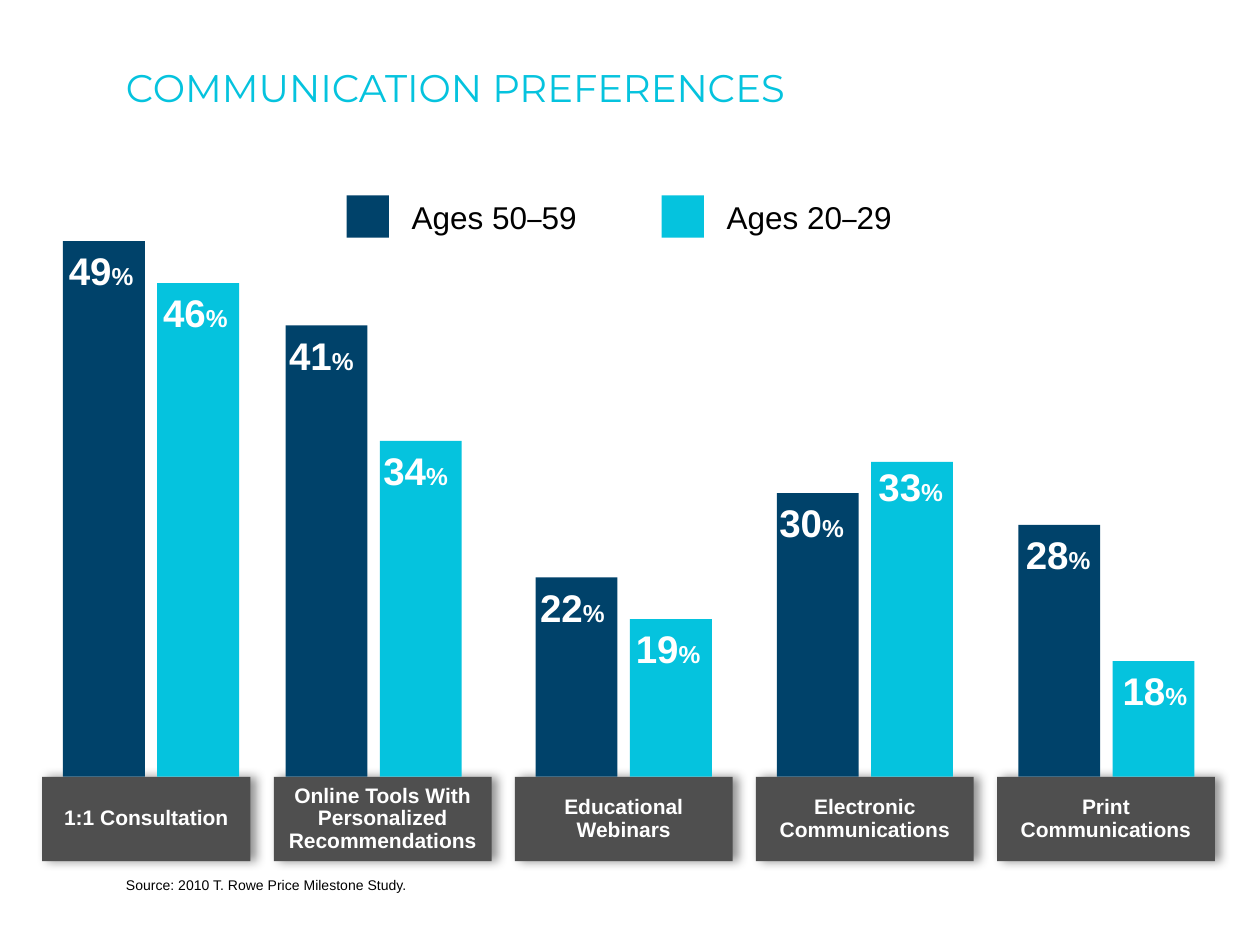
import lxml.etree
import pptx
import pptx.dml.color
import pptx.enum.shapes
import pptx.enum.text
import pptx.oxml.ns
import pptx.util

Cm = pptx.util.Cm
Pt = pptx.util.Pt
KIND = pptx.enum.shapes.MSO_SHAPE
ANCHOR = pptx.enum.text.MSO_ANCHOR
ALIGN = pptx.enum.text.PP_ALIGN
FIT = pptx.enum.text.MSO_AUTO_SIZE

NAVY, CYAN, GRAY = "00426A", "05C3DE", "4F4F4F"
WHITE, BLACK = "FFFFFF", "000000"

# All lengths are in centimetres
BASE = 15.66
BAR = 1.65
PITCH = 1.9
STEP = 4.86

# Caption, left edge of the bars, then (value, bar height, label shift) per age
GROUPS = [
    ("1:1 Consultation", 1.27, (49, 10.8, -0.13), (46, 9.95, -0.13)),
    ("Online Tools With Personalized Recommendations", 5.76,
     (41, 9.1, -0.18), (34, 6.77, -0.18)),
    ("Educational Webinars", 10.8, (22, 4.02, -0.16), (19, 3.18, -0.13)),
    ("Electronic Communications", 15.66, (30, 5.72, -0.2), (33, 6.35, -0.1)),
    ("Print Communications", 20.53, (28, 5.08, -0.1), (18, 2.33, -0.05)),
]


def color(code):
    return pptx.dml.color.RGBColor.from_string(code)


def style(run, size, code, bold=False, face="Arial"):
    font = run.font
    font.size, font.bold, font.name = Pt(size), bold, face
    font.color.rgb = color(code)


def inset(frame, gap):
    frame.margin_left = frame.margin_right = Cm(gap)
    frame.margin_top = frame.margin_bottom = Cm(gap)


def add_box(slide, kind, left, top, width, height, code):
    box = slide.shapes.add_shape(kind, Cm(left), Cm(top), Cm(width), Cm(height))
    box.shadow.inherit = False
    box.fill.solid()
    box.fill.fore_color.rgb = color(code)
    box.line.fill.background()
    return box


def add_text(slide, left, top, width, height):
    box = slide.shapes.add_textbox(Cm(left), Cm(top), Cm(width), Cm(height))
    box.text_frame.word_wrap = True
    return box.text_frame


def add_line(slide, text, top, height, anchor, size, code, face):
    frame = add_text(slide, 2.54, top, 20.75, height)
    inset(frame, 0)
    frame.vertical_anchor = anchor
    frame.text = text
    style(frame.paragraphs[0].runs[0], size, code, face=face)
    return frame.paragraphs[0]


def add_runs(frame, parts):
    frame.auto_size = FIT.SHAPE_TO_FIT_TEXT
    for text, *look in parts:
        run = frame.paragraphs[0].add_run()
        run.text = text
        style(run, *look)


def add_shade(box):
    qn = pptx.oxml.ns.qn
    effects = box._element.spPr.find(qn("a:effectLst"))
    shade = lxml.etree.SubElement(
        effects, qn("a:outerShdw"), blurRad=str(Pt(6)), dist=str(Pt(3)), dir="0",
        algn="ctr", rotWithShape="0")
    tint = lxml.etree.SubElement(shade, qn("a:srgbClr"), val=BLACK)
    lxml.etree.SubElement(tint, qn("a:alpha"), val="44000")


def add_plate(slide, text, left, width):
    box = add_box(slide, KIND.ROUNDED_RECTANGLE, left, BASE, width, 1.7, GRAY)
    box.adjustments[0] = 0
    add_shade(box)
    frame = box.text_frame
    frame.word_wrap = True
    frame.vertical_anchor = ANCHOR.MIDDLE
    inset(frame, 0.13)
    frame.text = text
    para = frame.paragraphs[0]
    para.alignment, para.line_spacing = ALIGN.CENTER, 0.9
    style(para.runs[0], 12, WHITE, True)


def add_bar(slide, left, value, height, shift, code):
    top = BASE - height
    add_box(slide, KIND.RECTANGLE, left, top, BAR, height, code)
    rise = 0.1 if value == 33 else 0  # this label sits a little higher
    frame = add_text(slide, left + shift, top - rise, 2.33, 1.2)
    add_runs(frame, [(str(value), 22, WHITE, True), ("%", 14, WHITE, True)])


def add_key(slide, left, first, last, code):
    frame = add_text(slide, left + 1.06, 3.86, 4.45, 1.03)
    add_runs(frame, [(f"Ages {first}", 18, BLACK),
                     ("–", 18, BLACK, False, "Arial Narrow"),
                     (last, 18, BLACK)])
    add_box(slide, KIND.RECTANGLE, left, 3.94, 0.85, 0.85, code)


def main():
    deck = pptx.Presentation()
    deck.slide_width, deck.slide_height = Cm(25.4), Cm(19.05)
    slide = deck.slides.add_slide(deck.slide_layouts[6])

    # Title and source
    title = add_line(slide, "COMMUNICATION PREFERENCES", 0.79, 2.06,
                     ANCHOR.MIDDLE, 22, CYAN, "Montserrat")
    title.line_spacing = 0.85
    add_line(slide, "Source: 2010 T. Rowe Price Milestone Study.", 16.74, 1.27,
             ANCHOR.BOTTOM, 8, BLACK, "Arial")

    # Captions with their pairs of bars; the first caption is narrower
    for i, (text, left, *bars) in enumerate(GROUPS):
        start, width = (5.52 + STEP * (i - 1), 4.39) if i else (0.85, 4.2)
        add_plate(slide, text, start, width)
        for j, (bar, code) in enumerate(zip(bars, (NAVY, CYAN))):
            add_bar(slide, left + j * PITCH, *bar, code)

    # Legend
    add_key(slide, 6.99, "50", "59", NAVY)
    add_key(slide, 13.34, "20", "29", CYAN)

    deck.save("out.pptx")


if __name__ == "__main__":
    main()
